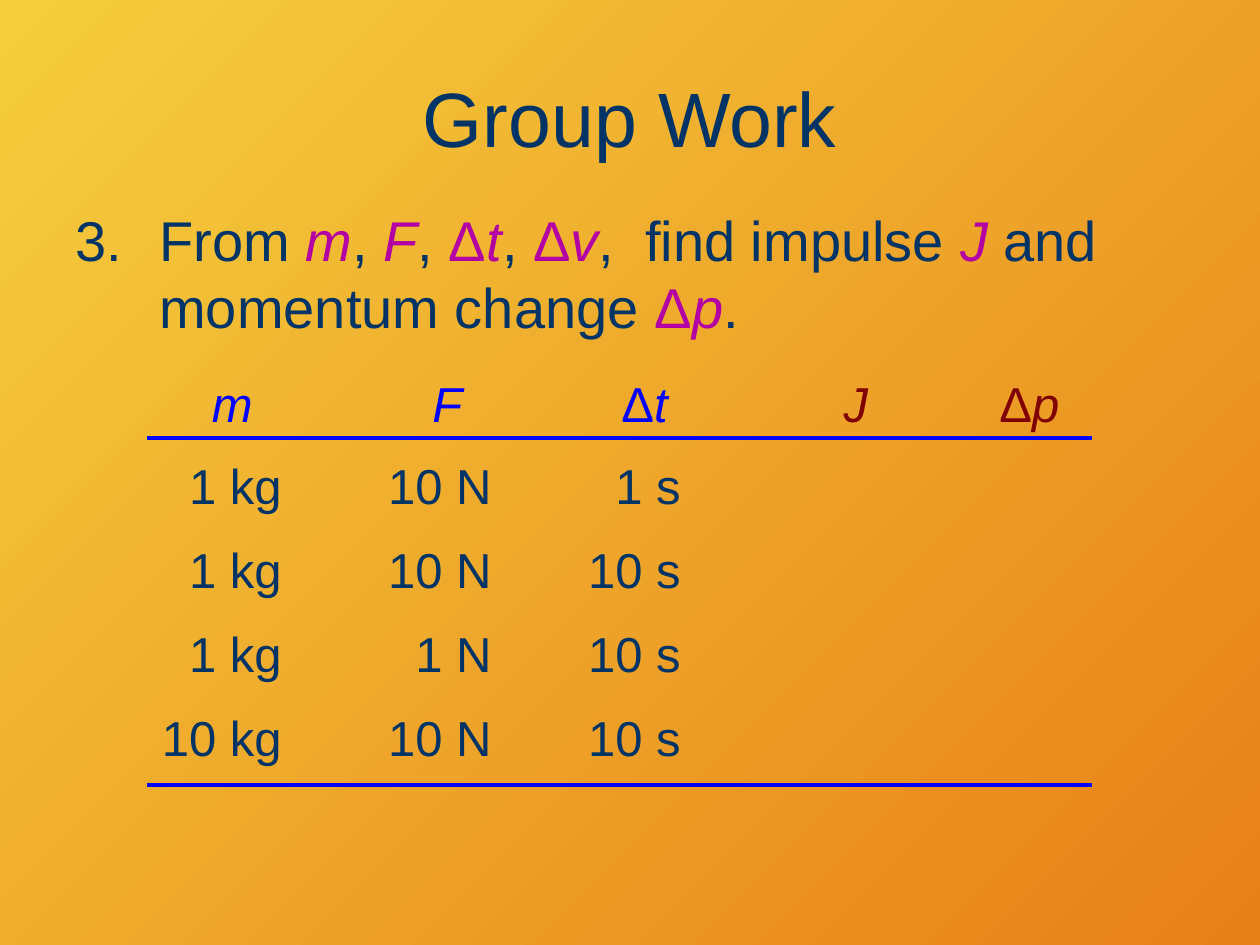
from pptx import Presentation
from pptx.dml.color import RGBColor
from pptx.enum.shapes import MSO_CONNECTOR as Link
from pptx.enum.text import MSO_ANCHOR as Anchor, PP_ALIGN as Align
from pptx.oxml.ns import qn
from pptx.util import Pt
from lxml.etree import SubElement

NAVY, BLUE, RED, PINK = "003366", "0000FF", "800000", "B300A4"
rgb = RGBColor.from_string


def add_text(left, top, width, height, size, hue=NAVY, align=Align.LEFT):
    """Add a text box and return its styled first paragraph."""
    frame = slide.shapes.add_textbox(Pt(left), Pt(top), Pt(width), Pt(height)).text_frame
    frame.word_wrap = True
    frame.vertical_anchor = Anchor.MIDDLE if size == 44 else Anchor.TOP
    para = frame.paragraphs[0]
    para.alignment = align
    para.font.name, para.font.size = "Arial", Pt(size)
    para.font.color.rgb = rgb(hue)
    return para


def add_symbol(para, symbol, hue):
    """Write letters in italics, with an upright delta."""
    for char in symbol:
        run = para.add_run()
        run.text = char
        run.font.name, run.font.size = para.font.name, para.font.size
        run.font.italic = char != "Δ"
        run.font.color.rgb = rgb(hue)


deck = Presentation()
deck.slide_width, deck.slide_height = Pt(720), Pt(540)
slide = deck.slides.add_slide(deck.slide_layouts[6])

fill = slide.background.fill
fill.gradient()
fill.gradient_angle = 315
for stop, hue in zip(fill.gradient_stops, ("F5CE3D", "E88018")):
    stop.color.rgb = rgb(hue)

add_text(36, 21.6, 648, 90, 44, align=Align.CENTER).add_run().text = "Group Work"

# Numbered task: plain text, each piece followed by a symbol
task = add_text(36, 114, 648, 90, 32)
props = task._p.get_or_add_pPr()
props.set("marL", str(Pt(48)))
props.set("indent", str(-Pt(48)))
props.insert_element_before(
    SubElement(props, qn("a:buAutoNum"), type="arabicPeriod", startAt="3"), "a:defRPr")
for plain, symbol in (
    ("From ", "m"), (", ", "F"), (", ", "Δt"), (", ", "Δv"),
    (",  find impulse ", "J"), (" and momentum change ", "Δp"), (".", ""),
):
    run = task.add_run()
    run.text = plain
    run.font.name, run.font.size = "Arial", Pt(32)
    run.font.color.rgb = rgb(NAVY)
    add_symbol(task, symbol, PINK)

# Values, aligned right in each column
columns = ((84, 84), (210, 78), (324, 72))
rows = (
    ("1 kg", "10 N", "1 s"),
    ("1 kg", "10 N", "10 s"),
    ("1 kg", "1 N", "10 s"),
    ("10 kg", "10 N", "10 s"),
)
for i, row in enumerate(rows):
    for (left, width), value in zip(columns, row):
        cell = add_text(left, 257 + 48 * i, width, 41, 28, align=Align.RIGHT)
        cell.add_run().text = value

for symbol, left, width, hue, align in (
    ("m", 114, 48, BLUE, Align.LEFT),
    ("F", 240, 48, BLUE, Align.LEFT),
    ("Δt", 348, 54, BLUE, Align.LEFT),
    ("J", 456, 66, RED, Align.CENTER),
    ("Δp", 564, 54, RED, Align.LEFT),
):
    add_symbol(add_text(left, 210, width, 41, 28, hue, align), symbol, hue)

for y in (250.5, 448.5):
    rule = slide.shapes.add_connector(Link.STRAIGHT, Pt(84), Pt(y), Pt(624), Pt(y))
    rule.line.color.rgb = rgb(BLUE)
    rule.line.width = Pt(2.25)
    SubElement(rule._element.spPr, qn("a:effectLst"))

deck.save("out.pptx")
